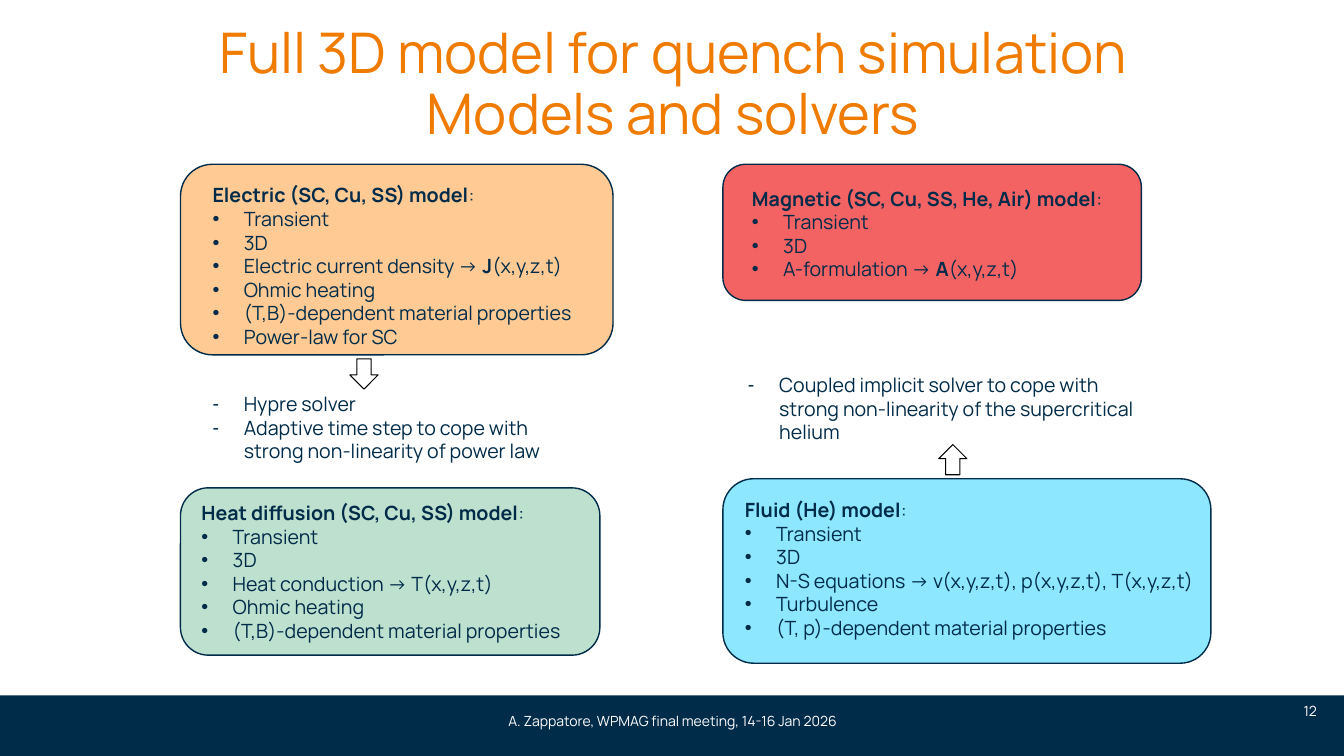
from lxml.etree import SubElement
from pptx import Presentation
from pptx.dml.color import RGBColor
from pptx.enum.shapes import MSO_SHAPE
from pptx.enum.text import MSO_ANCHOR, PP_ALIGN
from pptx.oxml.ns import qn
from pptx.util import Inches, Pt

COLORS = {"navy": "002B49", "orange": "EF7B00", "white": "FFFFFF", "black": "000000",
          "electric": "FFCA93", "magnetic": "F36363", "heat": "BEE0CE", "fluid": "8CE7FF"}
FONT = "Manrope"
WIDTH, HEIGHT = 13.33, 7.5
LEFT, RIGHT = 1.79, 7.17
TOP = 1.63
INDENT = 0.31

TITLE = "Full 3D model for quench simulation\vModels and solvers"
MODELS = [
    {"fill": "electric", "card": (LEFT, TOP, 4.29, 1.89), "inset": (0.22, 0.14),
     "heading": "Electric (SC, Cu, SS) model",
     "points": ["Transient", "3D", "Electric current density → **J**(x,y,z,t)", "Ohmic heating",
                "(T,B)-dependent material properties", "Power-law for SC"]},
    {"fill": "magnetic", "card": (RIGHT, TOP, 4.15, 1.35), "inset": (0.19, 0.17),
     "heading": "Magnetic (SC, Cu, SS, He, Air) model",
     "points": ["Transient", "3D", "A-formulation → **A**(x,y,z,t)"]},
    {"fill": "heat", "card": (LEFT, 4.84, 4.16, 1.66), "inset": (0.11, 0.08),
     "heading": "Heat diffusion (SC, Cu, SS) model",
     "points": ["Transient", "3D", "Heat conduction → T(x,y,z,t)", "Ohmic heating",
                "(T,B)-dependent material properties"]},
    {"fill": "fluid", "card": (RIGHT, 4.75, 4.84, 1.83), "inset": (0.12, 0.14),
     "heading": "Fluid (He) model",
     "points": ["Transient", "3D", "N-S equations → v(x,y,z,t), p(x,y,z,t), T(x,y,z,t)",
                "Turbulence", "(T, p)-dependent material properties"]},
]
SOLVERS = [
    {"box": (2.01, 3.84, 3.86, 0.81), "arrow": (3.46, 3.57), "turn": 90,
     "points": ["Hypre solver",
                "Adaptive time step to cope with strong non-linearity of power law"]},
    {"box": (7.32, 3.65, 4.27, 0.81), "arrow": (9.3, 4.42), "turn": 270,
     "points": ["Coupled implicit solver to cope with strong non-linearity of the "
                "supercritical helium"]},
]
FOOTERS = [
    ("A. Zappatore, WPMAG final meeting, 14-16 Jan 2026", (4.25, 6.95, 4.84, 0.4), PP_ALIGN.CENTER),
    ("12", (10.16, 6.93, 3, 0.24), PP_ALIGN.RIGHT),
]


def rgb(name):
    return RGBColor.from_string(COLORS[name])


def inches(box):
    return [Inches(length) for length in box]


def add_block(kind, box, fill, outline=None, weight=1):
    block = slide.shapes.add_shape(kind, *inches(box))
    block.shadow.inherit = False
    block.fill.solid()
    block.fill.fore_color.rgb = rgb(fill)
    if outline:
        block.line.color.rgb = rgb(outline)
        block.line.width = Pt(weight)
    else:
        block.line.fill.background()
    return block


def write(paragraph, text, size, color):
    for index, part in enumerate(text.split("**")):
        if part:
            run = paragraph.add_run()
            run.text = part
            for key, value in {"name": FONT, "size": Pt(size), "bold": index % 2 == 1}.items():
                setattr(run.font, key, value)
            run.font.color.rgb = rgb(color)


def add_text(box, lines, size=14, color="navy", align=PP_ALIGN.LEFT, anchor=MSO_ANCHOR.TOP):
    frame = slide.shapes.add_textbox(*inches(box)).text_frame
    frame.word_wrap = True
    frame.vertical_anchor = anchor
    for index, (bullet, text) in enumerate(lines):
        paragraph = frame.add_paragraph() if index else frame.paragraphs[0]
        paragraph.alignment = align
        if bullet:
            properties = paragraph._p.get_or_add_pPr()
            properties.set("marL", str(Inches(INDENT)))
            properties.set("indent", str(-Inches(INDENT)))
            SubElement(properties, qn("a:buFont")).set("typeface", "Arial")
            SubElement(properties, qn("a:buChar")).set("char", bullet)
        write(paragraph, text, size, color)


deck = Presentation()
deck.slide_width, deck.slide_height = inches((WIDTH, HEIGHT))
slide = deck.slides.add_slide(deck.slide_layouts[5])

title = slide.shapes.title
title.left, title.top, title.width, title.height = inches((0.29, 0.2, 12.77, 1.32))
title.text_frame.vertical_anchor = MSO_ANCHOR.TOP
title.text_frame.text = TITLE
heading = title.text_frame.paragraphs[0]
heading.alignment = PP_ALIGN.CENTER
heading.line_spacing = 0.9
for run in heading.runs:
    for key, value in {"name": FONT, "size": Pt(40), "bold": False}.items():
        setattr(run.font, key, value)
    run.font.color.rgb = rgb("orange")

add_block(MSO_SHAPE.RECTANGLE, (0, HEIGHT * 0.92, WIDTH, HEIGHT * 0.08), "navy")
for text, box, align in FOOTERS:
    add_text(box, [(None, text)], 10, "white", align, MSO_ANCHOR.MIDDLE)

for model in MODELS:
    left, top, width, height = model["card"]
    across, down = model["inset"]
    add_block(MSO_SHAPE.ROUNDED_RECTANGLE, model["card"], model["fill"], "navy")
    lines = [(None, f"**{model['heading']}**:")] + [("•", point) for point in model["points"]]
    add_text((left + across, top + down, width - across, height - down), lines)

for solver in SOLVERS:
    arrow = add_block(MSO_SHAPE.RIGHT_ARROW, (*solver["arrow"], 0.3, 0.28), "white", "black", 0.75)
    arrow.rotation = solver["turn"]
    add_text(solver["box"], [("-", point) for point in solver["points"]])

deck.save("out.pptx")
